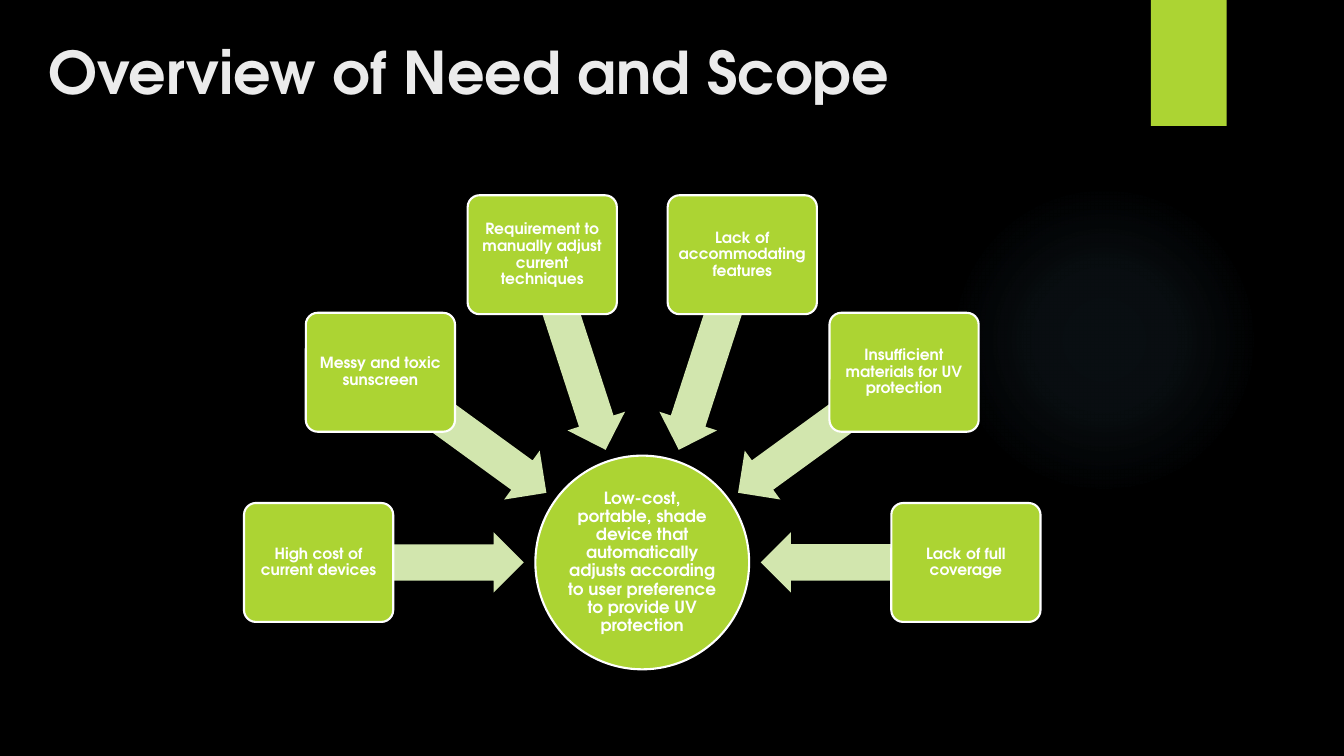
import math

from lxml import etree
from pptx import Presentation
from pptx import util as u
from pptx.dml.color import RGBColor
from pptx.enum import shapes, text
from pptx.oxml import ns

FONT = "TeX Gyre Adventor"
GREEN, PALE, WHITE = "ACD433", "D2E6AE", "FFFFFF"
NEEDS = [
    "High cost of current devices",
    "Messy and toxic sunscreen",
    "Requirement to manually adjust current techniques",
    "Lack of accommodating features",
    "Insufficient materials for UV protection",
    "Lack of full coverage",
]
GOAL = ("Low-cost, portable, shade device that automatically adjusts "
        "according to user preference to provide UV protection")


def color(hex_code):
    """Turn a hex string into a colour."""
    return RGBColor.from_string(hex_code)


def write(part, words, size, ink=WHITE, inset=0.02, spacing=0.9,
          align=text.PP_ALIGN.CENTER, anchor=text.MSO_ANCHOR.MIDDLE):
    """Put one formatted bold paragraph into a part."""
    frame = part.text_frame
    frame.word_wrap = True
    frame.vertical_anchor = anchor
    frame.margin_left = frame.margin_right = u.Inches(inset)
    frame.margin_top = frame.margin_bottom = u.Inches(min(inset, 0.05))
    paragraph = frame.paragraphs[0]
    paragraph.alignment = align
    paragraph.line_spacing = spacing
    run = paragraph.add_run()
    run.text = words
    run.font.name, run.font.size, run.font.bold = FONT, u.Pt(size), True
    run.font.color.rgb = color(ink)


def add_part(slide, kind, center, size, fill, outline=None):
    """Add a preset shape around a centre point."""
    (x, y), (width, height) = center, size
    part = slide.shapes.add_shape(
        kind, u.Inches(x - width / 2), u.Inches(y - height / 2),
        u.Inches(width), u.Inches(height))
    part.shadow.inherit = False
    part.fill.solid()
    part.fill.fore_color.rgb = color(fill)
    if outline:
        part.line.color.rgb = color(outline)
        part.line.width = u.Pt(1.5)
    else:
        part.line.fill.background()
    return part


def add_glow(slide, center, diameter):
    """Add a faint round glow that fades outwards."""
    tint = "7AC4F0"
    glow = add_part(slide, shapes.MSO_SHAPE.OVAL, center,
                    (diameter, diameter), tint)
    stops = "".join(
        f'<a:gs pos="{place * 1000}"><a:srgbClr val="{tint}">'
        f'<a:alpha val="{alpha * 1000}"/></a:srgbClr></a:gs>'
        for place, alpha in [(0, 7), (36, 6), (69, 0)])
    gradient = etree.fromstring(
        f'<a:gradFill {ns.nsdecls("a")}><a:gsLst>{stops}</a:gsLst>'
        '<a:path path="circle"><a:fillToRect l="50000" t="50000" '
        'r="50000" b="50000"/></a:path></a:gradFill>')
    properties = glow.element.spPr
    properties.replace(properties.find(ns.qn("a:solidFill")), gradient)


def add_title(slide, left, top, width, height):
    """Add the slide heading in its box."""
    heading = slide.shapes.add_textbox(*map(u.Inches, (left, top, width, height)))
    write(heading, "Overview of Need and Scope", 42, "EBEBEB", 0.1, 1,
          text.PP_ALIGN.LEFT, text.MSO_ANCHOR.TOP)


def add_need(slide, center, angle, words):
    """Add one need card and the arrow from it to the goal."""
    def at(radius):
        turn = math.radians(angle)
        return (center[0] + radius * math.cos(turn),
                center[1] + radius * math.sin(turn))

    arrow = add_part(slide, shapes.MSO_SHAPE.LEFT_ARROW, at(2.19), (2.03, 0.6), PALE)
    arrow.adjustments[0], arrow.adjustments[1] = 0.6, 0.5
    arrow.rotation = angle
    card = add_part(slide, shapes.MSO_SHAPE.ROUNDED_RECTANGLE, at(3.21),
                    (1.48, 1.18), GREEN, WHITE)
    card.adjustments[0] = 0.1
    write(card, words, 11)


def add_radial(slide, center):
    """Add the central goal with the needs fanned out above it."""
    goal = add_part(slide, shapes.MSO_SHAPE.OVAL, center, (2.12, 2.12), GREEN, WHITE)
    write(goal, GOAL, 12, inset=0.01)
    step = 180 / (len(NEEDS) - 1)
    for index, need in enumerate(NEEDS):
        add_need(slide, center, (180 + step * index) % 360, need)


def main():
    """Build and save the slide."""
    deck = Presentation()
    deck.slide_width, deck.slide_height = u.Inches(13.33), u.Inches(7.5)
    slide = deck.slides.add_slide(deck.slide_layouts[6])
    slide.background.fill.solid()
    slide.background.fill.fore_color.rgb = color("000000")
    add_glow(slide, (10.95, 3.37), 3.08)
    add_part(slide, shapes.MSO_SHAPE.RECTANGLE, (11.79, 0.625), (0.75, 1.25), GREEN)
    add_title(slide, 0.38, 0.31, 10.29, 1.53)
    add_radial(slide, (6.37, 5.58))
    deck.save("out.pptx")


if __name__ == "__main__":
    main()
